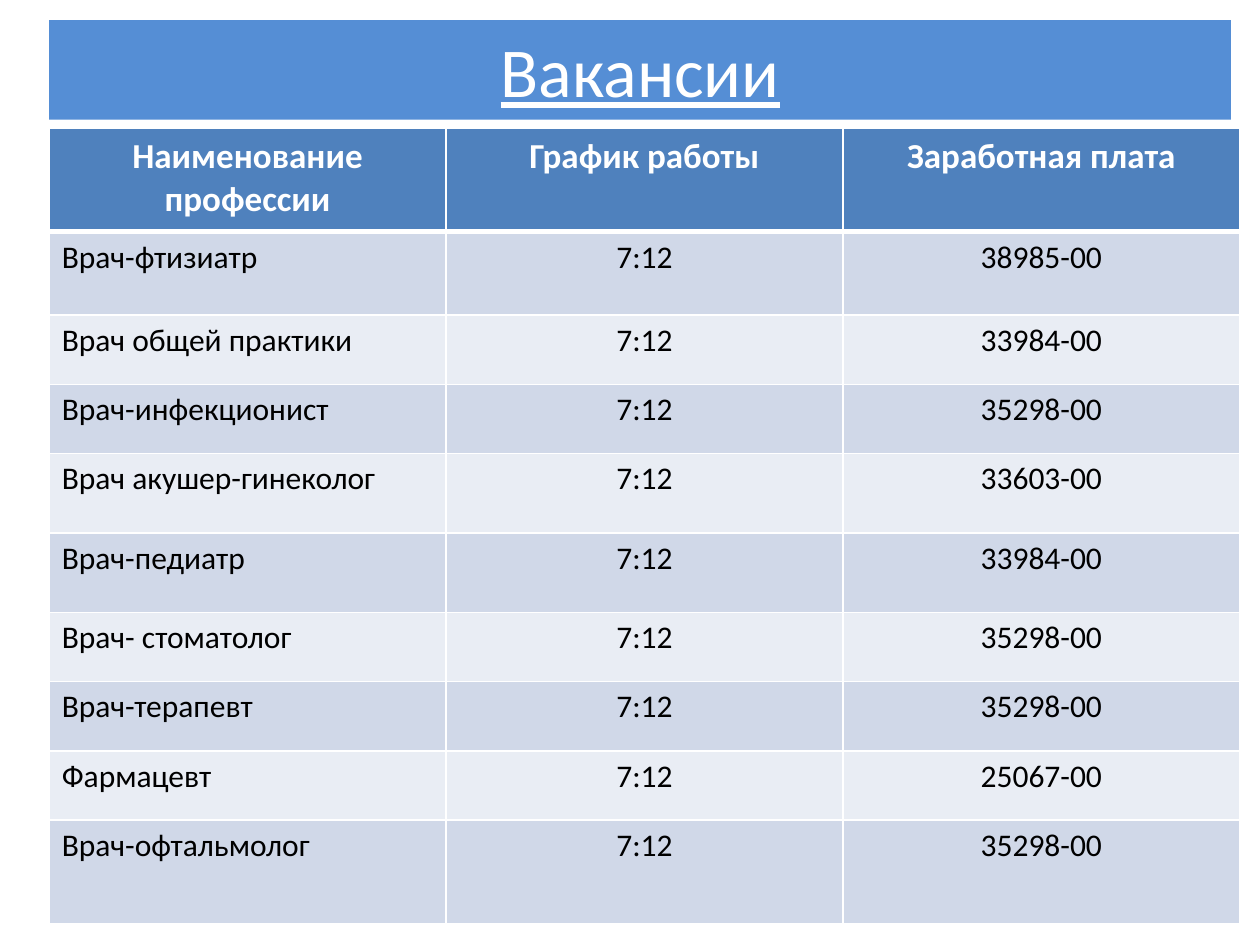
from dataclasses import dataclass

from lxml import etree
from pptx import Presentation
from pptx.dml.color import RGBColor
from pptx.enum.shapes import MSO_SHAPE
from pptx.enum.text import MSO_ANCHOR, PP_ALIGN
from pptx.oxml.ns import qn
from pptx.util import Inches, Pt

RECTANGLE = MSO_SHAPE.RECTANGLE
MIDDLE = MSO_ANCHOR.MIDDLE
LEFT, CENTER = PP_ALIGN.LEFT, PP_ALIGN.CENTER
BLANK_LAYOUT = 6


@dataclass(frozen=True)
class Theme:
    font: str = "Calibri"
    banner: str = "558ED5"
    header: str = "4F81BD"
    bands: tuple = ("D0D8E8", "E9EDF4")
    light: str = "FFFFFF"
    dark: str = "000000"
    title_size: int = 40
    header_size: int = 20
    body_size: int = 18
    rule: int = 1
    header_rule: int = 3


THEME = Theme()

MARGIN = 0.39
COLUMN_WIDTH = 3.15
ROW_HEIGHTS = [0.82, 0.66, 0.55, 0.55, 0.63, 0.63, 0.55, 0.55, 0.55, 0.82]

HEADINGS = ("Наименование профессии", "График работы", "Заработная плата")
SCHEDULE = "7:12"
VACANCIES = [
    ("Врач-фтизиатр", "38985-00"),
    ("Врач общей практики", "33984-00"),
    ("Врач-инфекционист", "35298-00"),
    ("Врач акушер-гинеколог", "33603-00"),
    ("Врач-педиатр", "33984-00"),
    ("Врач- стоматолог", "35298-00"),
    ("Врач-терапевт", "35298-00"),
    ("Фармацевт", "25067-00"),
    ("Врач-офтальмолог", "35298-00"),
]


def set_text(frame, text, size, color, align=CENTER, bold=False, underline=False):
    frame.text = text
    paragraph = frame.paragraphs[0]
    paragraph.alignment = align
    font = paragraph.runs[0].font
    font.name, font.size = THEME.font, Pt(size)
    font.bold, font.underline = bold, underline
    font.color.rgb = RGBColor.from_string(color)


def paint(fill, color):
    fill.solid()
    fill.fore_color.rgb = RGBColor.from_string(color)


def set_borders(cell, top, bottom):
    """Draw light cell borders; top and bottom are widths in points."""
    properties = cell._tc.get_or_add_tcPr()
    widths = {"a:lnL": THEME.rule, "a:lnR": THEME.rule, "a:lnT": top, "a:lnB": bottom}
    for position, (side, width) in enumerate(widths.items()):
        line = etree.Element(qn(side), w=str(Pt(width)))
        solid = etree.SubElement(line, qn("a:solidFill"))
        etree.SubElement(solid, qn("a:srgbClr"), val=THEME.light)
        properties.insert(position, line)


def add_banner(slide, title):
    banner = slide.shapes.add_shape(
        RECTANGLE, Inches(MARGIN), Inches(0.16), Inches(9.38), Inches(0.79))
    banner.shadow.inherit = False
    banner.line.fill.background()
    paint(banner.fill, THEME.banner)
    banner.text_frame.word_wrap = True
    banner.text_frame.vertical_anchor = MIDDLE
    set_text(banner.text_frame, title, THEME.title_size, THEME.light, underline=True)


def fill_cell(cell, text, row, column):
    is_header = row == 0
    set_borders(cell,
                top=THEME.header_rule if row == 1 else THEME.rule,
                bottom=THEME.header_rule if is_header else THEME.rule)
    if is_header:
        paint(cell.fill, THEME.header)
        set_text(cell.text_frame, text, THEME.header_size, THEME.light, bold=True)
    else:
        paint(cell.fill, THEME.bands[(row - 1) % 2])
        set_text(cell.text_frame, text, THEME.body_size, THEME.dark,
                 align=CENTER if column else LEFT)


def add_vacancy_table(slide):
    rows = [HEADINGS] + [(job, SCHEDULE, salary) for job, salary in VACANCIES]
    table = slide.shapes.add_table(
        len(rows), len(HEADINGS), Inches(MARGIN), Inches(1.02),
        Inches(COLUMN_WIDTH * len(HEADINGS)), Inches(sum(ROW_HEIGHTS))).table
    for column in table.columns:
        column.width = Inches(COLUMN_WIDTH)
    for r, (height, texts) in enumerate(zip(ROW_HEIGHTS, rows)):
        table.rows[r].height = Inches(height)
        for c, text in enumerate(texts):
            fill_cell(table.cell(r, c), text, r, c)


def main():
    deck = Presentation()
    deck.slide_width, deck.slide_height = Inches(10), Inches(7.5)
    slide = deck.slides.add_slide(deck.slide_layouts[BLANK_LAYOUT])
    paint(slide.background.fill, THEME.light)
    add_banner(slide, "Вакансии")
    add_vacancy_table(slide)
    deck.save("out.pptx")


if __name__ == "__main__":
    main()
